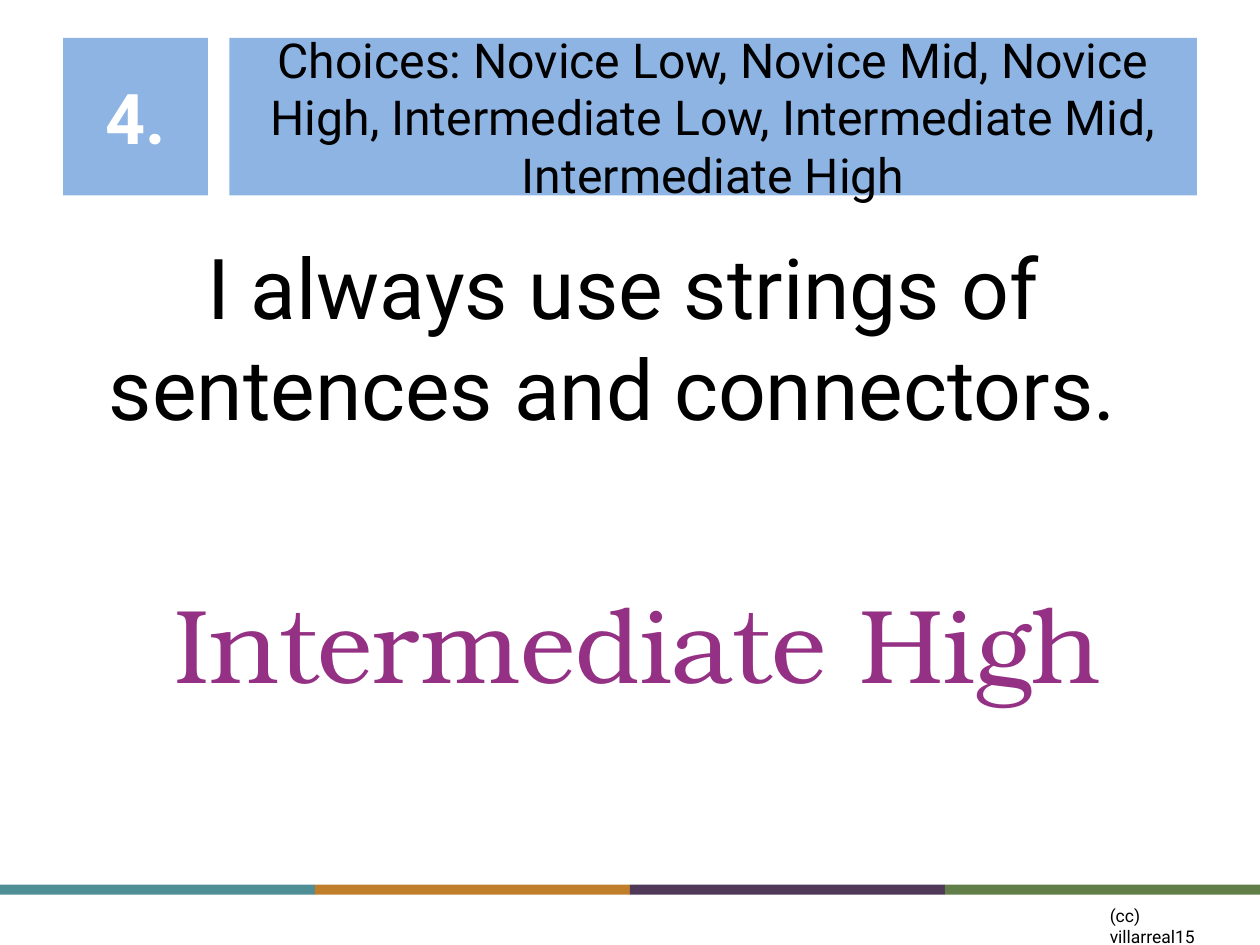
from dataclasses import dataclass
from typing import Optional

import pptx
import pptx.dml.color
import pptx.enum.shapes
import pptx.enum.text
import pptx.util

RGB = pptx.dml.color.RGBColor
ALIGN = pptx.enum.text.PP_ALIGN
ANCHOR = pptx.enum.text.MSO_ANCHOR

WHITE = RGB(0xFF, 0xFF, 0xFF)
BLACK = RGB(0x00, 0x00, 0x00)
HEADER_BLUE = RGB(0x8E, 0xB4, 0xE3)
PURPLE = RGB(0x95, 0x31, 0x84)
STRIPE_COLORS = (
    RGB(0x4E, 0x8E, 0x94),
    RGB(0xC1, 0x7E, 0x2A),
    RGB(0x4F, 0x38, 0x58),
    RGB(0x61, 0x7E, 0x48),
)

WIDTH, HEIGHT = 10, 7.5
HEADER_TOP, HEADER_HEIGHT = 0.3, 1.25
STRIPE_TOP, STRIPE_HEIGHT = 7.02, 0.08


@dataclass
class Box:
    """A place on the slide, in inches."""
    left: float
    top: float
    width: float
    height: float

    def emu(self) -> list:
        return [pptx.util.Inches(v)
                for v in (self.left, self.top, self.width, self.height)]


@dataclass
class Label:
    box: Box
    text: str
    size: float
    color: RGB = BLACK
    font: str = "Roboto"
    bold: bool = False
    fill: Optional[RGB] = None
    align: ALIGN = ALIGN.CENTER
    anchor: ANCHOR = ANCHOR.MIDDLE
    space_before: float = 0


LABELS = (
    # Header: question number and answer choices
    Label(Box(0.5, HEADER_TOP, 1.15, HEADER_HEIGHT), "4.", 40,
          color=WHITE, bold=True, fill=HEADER_BLUE),
    Label(Box(1.82, HEADER_TOP, 7.68, HEADER_HEIGHT),
          "Choices: Novice Low, Novice Mid, Novice High, Intermediate Low, "
          "Intermediate Mid, Intermediate High", 27.5, fill=HEADER_BLUE),
    # Statement and its answer
    Label(Box(0.5, 1.82, 8.89, 2.55),
          "I always use strings of sentences and connectors. ", 48,
          anchor=ANCHOR.TOP, space_before=3.6),
    Label(Box(0.72, 3.84, 8.68, 2.5), "Intermediate High", 60,
          color=PURPLE, font="TeX Gyre Bonum", space_before=3.6),
    # Credit
    Label(Box(8.71, 7.13, 1.07, 0.27), "(cc) villarreal15", 10,
          align=ALIGN.LEFT, anchor=ANCHOR.TOP),
)


def add_rect(slide: pptx.slide.Slide, box: Box, fill: RGB):
    sp = slide.shapes.add_shape(
        pptx.enum.shapes.MSO_SHAPE.RECTANGLE, *box.emu())
    sp.shadow.inherit = False
    sp.fill.solid()
    sp.fill.fore_color.rgb = fill
    sp.line.fill.background()
    return sp


def add_label(slide: pptx.slide.Slide, label: Label) -> None:
    if label.fill is None:
        sp = slide.shapes.add_textbox(*label.box.emu())
    else:
        sp = add_rect(slide, label.box, label.fill)
    tf = sp.text_frame
    tf.word_wrap = True
    tf.vertical_anchor = label.anchor
    p = tf.paragraphs[0]
    p.text = label.text
    p.alignment = label.align
    p.space_before = pptx.util.Pt(label.space_before)
    p.font.name = label.font
    p.font.size = pptx.util.Pt(label.size)
    p.font.bold = label.bold
    p.font.color.rgb = label.color


def add_stripe(slide: pptx.slide.Slide) -> None:
    column = WIDTH / len(STRIPE_COLORS)
    for i, color in enumerate(STRIPE_COLORS):
        add_rect(slide, Box(i * column, STRIPE_TOP, column, STRIPE_HEIGHT), color)


def main() -> None:
    prs = pptx.Presentation()
    prs.slide_width = pptx.util.Inches(WIDTH)
    prs.slide_height = pptx.util.Inches(HEIGHT)
    s = prs.slides.add_slide(prs.slide_layouts[6])
    add_stripe(s)
    for label in LABELS:
        add_label(s, label)
    prs.save("out.pptx")


if __name__ == "__main__":
    main()
